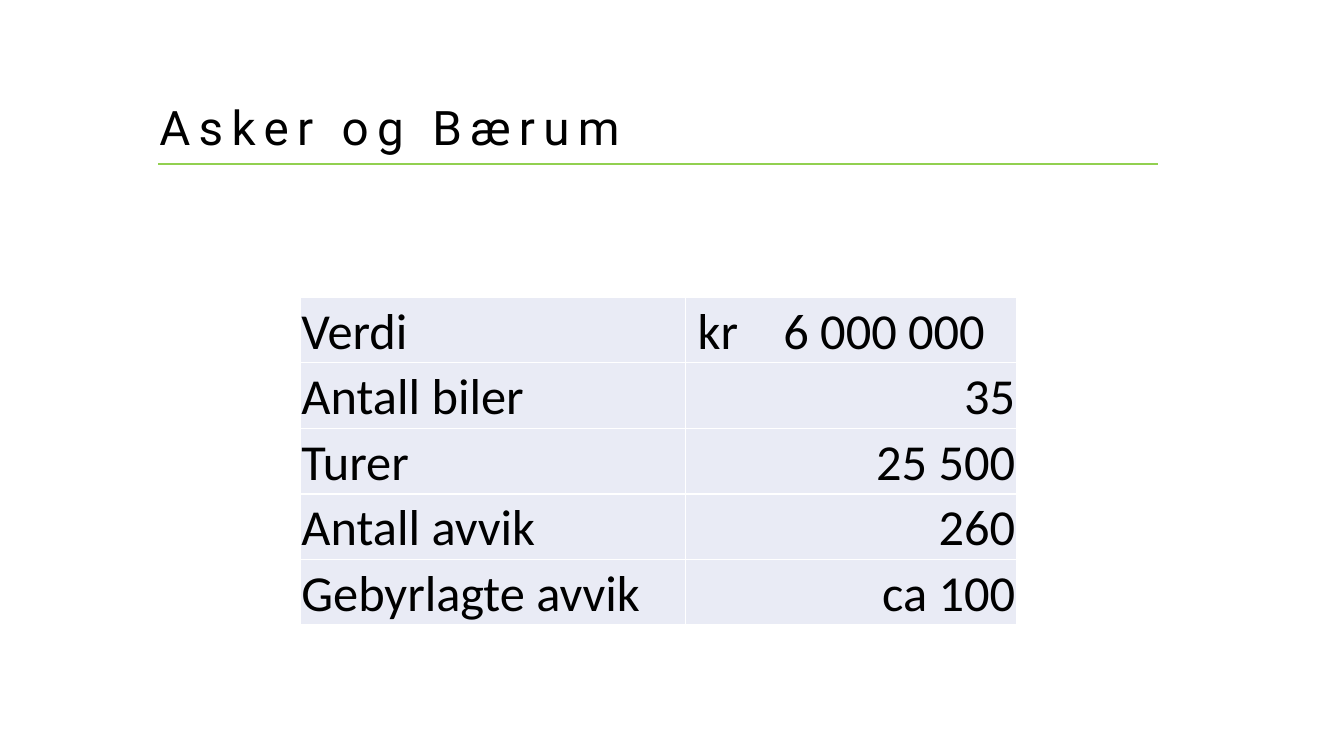
"""Build the Asker og Bærum key-figure slide."""
from lxml import etree
from pptx import Presentation, util as u
from pptx.dml.color import RGBColor
from pptx.enum import shapes, text
from pptx.oxml.ns import qn

TITLE = "Asker og Bærum"
ROWS = [
    ("Verdi", "kr\t6 000 000"),
    ("Antall biler", "35"),
    ("Turer", "25 500"),
    ("Antall avvik", "260"),
    ("Gebyrlagte avvik", "ca 100"),
]
COLS = (3.82, 3.28)
ROW_H = 0.65
TABLE_AT = (2.98, 2.95)
RULE = (1.57, 11.49, 1.63)
KR_INDENT, AMOUNT_TAB = 0.12, 0.85


def color(value):
    return RGBColor.from_string(value)


def add_run(p, words, font, size):
    r = p.add_run()
    r.text = words
    r.font.name, r.font.size = font, u.Pt(size)
    r.font.bold = False
    r.font.color.rgb = color("000000")
    return r


def add_borders(cell, value):
    tcPr = cell._tc.get_or_add_tcPr()
    for i, side in enumerate(("lnL", "lnR", "lnT", "lnB")):
        ln = etree.Element(qn("a:" + side), w=str(u.Pt(1)))
        fill = etree.SubElement(ln, qn("a:solidFill"))
        etree.SubElement(fill, qn("a:srgbClr"), val=value)
        tcPr.insert(i, ln)


def add_title(s):
    sp = s.shapes.title
    sp.left, sp.top, sp.width, sp.height = map(u.Inches, (1.48, 0.97, 10, 0.64))
    tf = sp.text_frame
    tf.vertical_anchor = text.MSO_ANCHOR.MIDDLE
    tf.auto_size = text.MSO_AUTO_SIZE.NONE
    p = tf.paragraphs[0]
    p.alignment, p.line_spacing = text.PP_ALIGN.LEFT, 0.9
    r = add_run(p, TITLE, "Roboto", 34)
    r.font._element.set("spc", "600")


def add_rule(s):
    x1, x2, y = map(u.Inches, RULE)
    line = s.shapes.add_connector(shapes.MSO_CONNECTOR.STRAIGHT, x1, y, x2, y)
    line.line.color.rgb = color("92D050")
    line.line.width = u.Pt(1.5)
    etree.SubElement(line._element.spPr, qn("a:effectLst"))


def fill_cell(cell, words, is_value):
    cell.fill.solid()
    cell.fill.fore_color.rgb = color("E9EBF5")
    add_borders(cell, "FFFFFF")
    cell.vertical_anchor = text.MSO_ANCHOR.BOTTOM
    cell.margin_left = cell.margin_right = cell.margin_top = u.Inches(0.01)
    cell.margin_bottom = 0
    p = cell.text_frame.paragraphs[0]
    if "\t" in words:
        cell.margin_left = u.Inches(KR_INDENT)
        tabs = etree.SubElement(p._p.get_or_add_pPr(), qn("a:tabLst"))
        etree.SubElement(tabs, qn("a:tab"), pos=str(u.Inches(AMOUNT_TAB)), algn="l")
    elif is_value:
        p.alignment = text.PP_ALIGN.RIGHT
    add_run(p, words, "Calibri", 36)


def add_figures(s):
    size = (sum(COLS), ROW_H * len(ROWS))
    table = s.shapes.add_table(len(ROWS), len(COLS), *map(u.Inches, TABLE_AT + size)).table
    table.first_row = table.horz_banding = False
    for col, width in zip(table.columns, COLS):
        col.width = u.Inches(width)
    for i, row in enumerate(ROWS):
        for j, words in enumerate(row):
            fill_cell(table.cell(i, j), words, j == 1)


def main():
    prs = Presentation()
    prs.slide_width, prs.slide_height = u.Inches(13.33), u.Inches(7.5)
    s = prs.slides.add_slide(prs.slide_layouts[5])
    add_rule(s)
    add_title(s)
    add_figures(s)
    prs.save("out.pptx")


if __name__ == "__main__":
    main()
